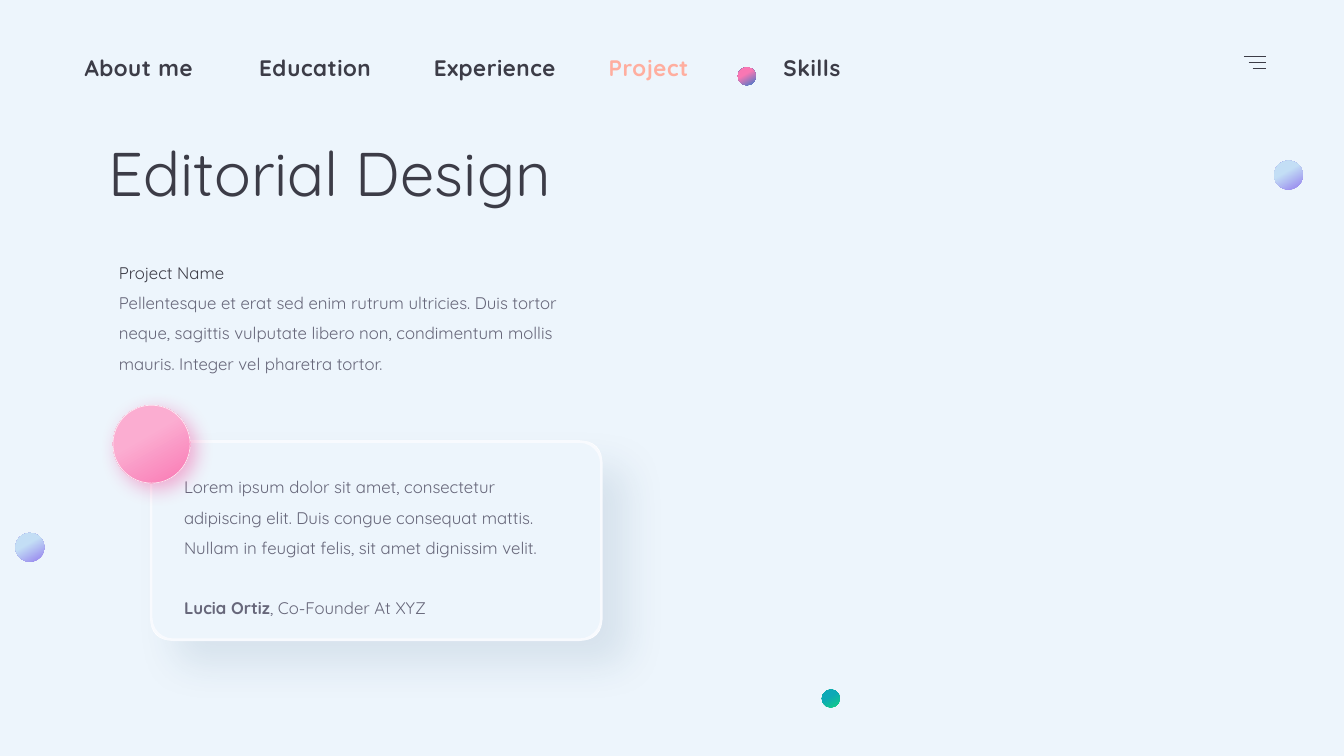
from lxml.etree import SubElement
from pptx import Presentation
from pptx.dml.color import RGBColor
from pptx.enum.shapes import MSO_CONNECTOR, MSO_SHAPE
from pptx.enum.text import MSO_ANCHOR, MSO_AUTO_SIZE, PP_ALIGN
from pptx.oxml.ns import qn
from pptx.util import Pt

PX = 9144
FONT = "Quicksand"
ICE = RGBColor(0xED, 0xF5, 0xFC)
WHITE = RGBColor(0xFF, 0xFF, 0xFF)
BORDER = RGBColor(0xF8, 0xFA, 0xFE)
INK = RGBColor(0x3C, 0x3C, 0x47)
GREY = RGBColor(0x67, 0x67, 0x7A)
CORAL = RGBColor(0xFF, 0xAE, 0x9F)
PINK = RGBColor(0xF9, 0x77, 0xB3)
LIGHT_PINK = RGBColor(0xFB, 0xAD, 0xD1)
RING = RGBColor(0xFD, 0xEA, 0xF3)
VIOLET = RGBColor(0x94, 0x7F, 0xEE)
SKY = RGBColor(0xC3, 0xDE, 0xF5)
GREEN = RGBColor(0x14, 0xD0, 0x83)
TEAL = RGBColor(0x0D, 0xA9, 0xB7)
BLUE = RGBColor(0x3C, 0x78, 0xCB)
NAVY_SHADOW = RGBColor(0x11, 0x40, 0x69)
PINK_SHADOW = RGBColor(0xF5, 0x1F, 0x82)


def emu(*lengths):
    return [length * PX for length in lengths]


def style_run(run, size, color, bold=False):
    run.font.name = FONT
    run.font.size = Pt(size)
    run.font.color.rgb = color
    run.font.bold = bold


def add_text(slide, box, lines, size, color, bold=False):
    frame = slide.shapes.add_textbox(*emu(*box)).text_frame
    frame.word_wrap = True
    frame.text = "\n".join(lines)
    for paragraph in frame.paragraphs:
        paragraph.line_spacing = 1.5
        for run in paragraph.runs:
            style_run(run, size, color, bold)
    return frame


def add_shadow(shape, color, alpha, blur, distance):
    effects = shape._element.spPr.find(qn("a:effectLst"))
    shadow = SubElement(effects, qn("a:outerShdw"), blurRad=str(Pt(blur)),
                        dist=str(Pt(distance)), dir=str(45 * 60000),
                        algn="ctr", rotWithShape="0")
    tint = SubElement(shadow, qn("a:srgbClr"), val=str(color))
    SubElement(tint, qn("a:alpha"), val=str(alpha * 1000))


def add_ball(slide, box, start, end):
    ball = slide.shapes.add_shape(MSO_SHAPE.OVAL, *emu(*box))
    ball.shadow.inherit = False
    ball.line.fill.background()
    ball.fill.gradient()
    ball.fill.gradient_angle = 120
    for stop, color, position in zip(ball.fill.gradient_stops, (start, end), (0, 0.6)):
        stop.color.rgb = color
        stop.position = position
    return ball


def add_panel(slide, box, corner, border, width):
    panel = slide.shapes.add_shape(MSO_SHAPE.ROUNDED_RECTANGLE, *emu(*box))
    panel.adjustments[0] = corner
    panel.shadow.inherit = False
    panel.fill.solid()
    panel.fill.fore_color.rgb = ICE
    panel.line.color.rgb = border
    panel.line.width = Pt(width)
    return panel


def add_menu(slide, left, top, width):
    for row, indent in enumerate((0, 7, 13)):
        y = top + row * 9
        bar = slide.shapes.add_connector(
            MSO_CONNECTOR.STRAIGHT, *emu(left + indent, y, left + width, y))
        bar.line.color.rgb = INK
        bar.line.width = Pt(1.5)
        SubElement(bar._element.spPr, qn("a:effectLst"))


def add_navigation(slide, left, top, active):
    sections = ("About me", "Education", "Experience", "Project", "Skills")
    for column, section in enumerate(sections):
        color = CORAL if section == active else INK
        frame = add_text(slide, (left + column * 260, top, 224, 56),
                         [section], 24, color, True)
        frame.paragraphs[0].runs[0].font._element.set("spc", "60")


def add_title(slide, box):
    title = slide.shapes.title
    title.left, title.top, title.width, title.height = emu(*box)
    frame = title.text_frame
    frame.text = "Editorial Design"
    frame.word_wrap = True
    frame.auto_size = MSO_AUTO_SIZE.SHAPE_TO_FIT_TEXT
    frame.vertical_anchor = MSO_ANCHOR.TOP
    paragraph = frame.paragraphs[0]
    paragraph.alignment = PP_ALIGN.LEFT
    paragraph.line_spacing = Pt(70)
    style_run(paragraph.runs[0], 66, INK)


def add_project(slide, box):
    frame = add_text(slide, box, [
        "Project Name",
        "Pellentesque et erat sed enim rutrum ultricies. Duis tortor neque, "
        "sagittis vulputate libero non, condimentum mollis mauris. "
        "Integer vel pharetra tortor.",
    ], 18, GREY)
    frame.paragraphs[0].runs[0].font.color.rgb = INK


def add_testimonial(slide, box):
    left, top, width, height = box
    base = add_panel(slide, box, 0.09, WHITE, 1)
    add_shadow(base, NAVY_SHADOW, 10, 43, 37)
    add_panel(slide, box, 0.11, BORDER, 2.75)
    frame = add_text(slide, (left + 39, top + 33, width - 77, height - 61), [
        "Lorem ipsum dolor sit amet, consectetur adipiscing elit. "
        "Duis congue consequat mattis. "
        "Nullam in feugiat felis, sit amet dignissim velit.",
        "Lucia Ortiz",
    ], 18, GREY)
    author = frame.paragraphs[1]
    author.space_before = Pt(32)
    author.runs[0].font.bold = True
    role = author.add_run()
    role.text = ", Co-Founder At XYZ"
    style_run(role, 18, GREY)
    portrait = add_ball(slide, (left - 57, top - 54, 115, 116), PINK, LIGHT_PINK)
    portrait.line.color.rgb = RING
    portrait.line.width = Pt(0.75)
    add_shadow(portrait, PINK_SHADOW, 34, 21, 8)


def add_decoration(slide):
    add_ball(slide, (1896, 239, 43, 43), VIOLET, SKY)
    add_ball(slide, (1223, 1026, 27, 27), GREEN, TEAL)
    add_ball(slide, (23, 793, 43, 43), VIOLET, SKY)
    add_ball(slide, (1098, 100, 27, 27), BLUE, PINK)


def main():
    deck = Presentation()
    deck.slide_width, deck.slide_height = emu(2000, 1125)
    slide = deck.slides.add_slide(deck.slide_layouts[5])
    slide.background.fill.solid()
    slide.background.fill.fore_color.rgb = ICE
    add_menu(slide, 1851, 84, 33)
    add_testimonial(slide, (225, 657, 670, 295))
    add_title(slide, (152, 209, 756, 111))
    add_decoration(slide)
    add_navigation(slide, 116, 55, "Project")
    add_project(slide, (167, 371, 744, 188))
    deck.save("out.pptx")


if __name__ == "__main__":
    main()
